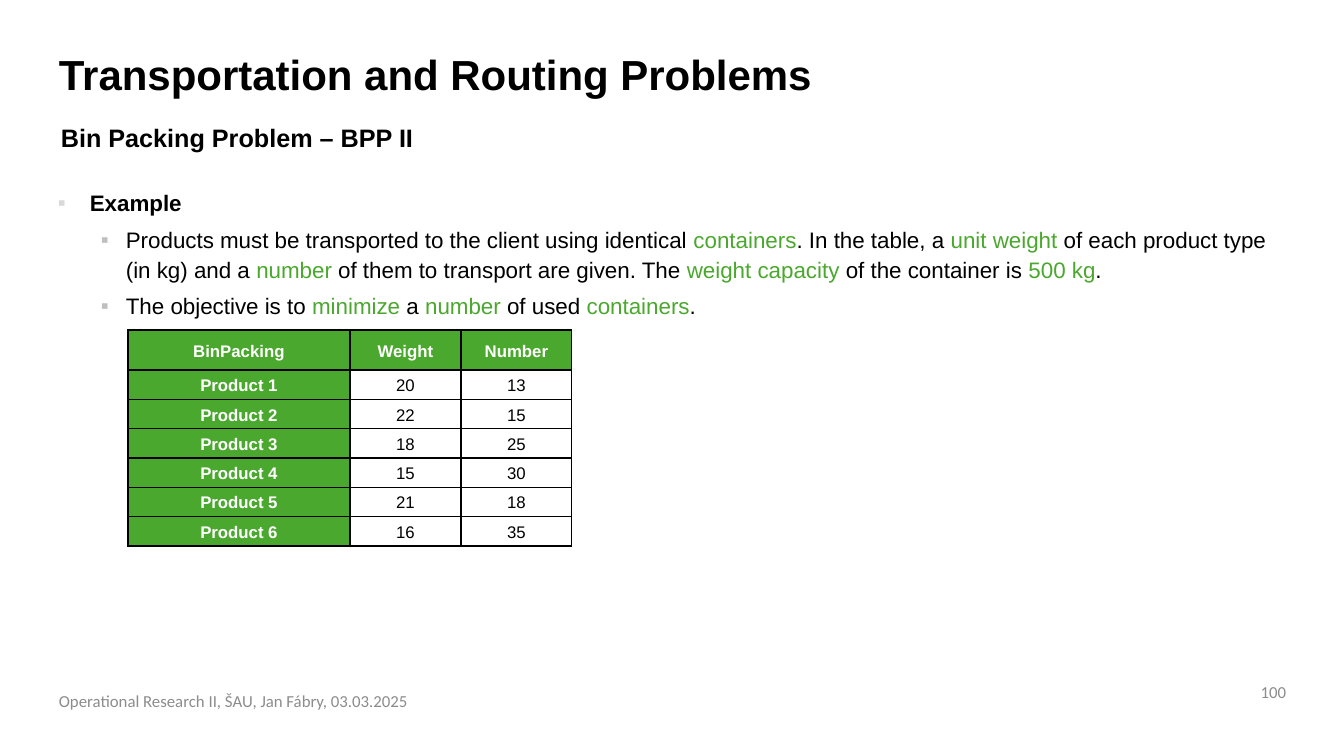
from pptx import Presentation
from pptx.dml.color import RGBColor
from pptx.enum.text import MSO_ANCHOR as Anchor, PP_ALIGN as Align
from pptx.oxml import parse_xml
from pptx.oxml.ns import nsdecls
from pptx.util import Pt

PX = 9071
GREEN, BLACK, WHITE, GREY = "4BA82E", "000000", "FFFFFF", "8C8C8C"


def colour(value):
    return RGBColor.from_string(value)


def write(para, text, size=16, font="Arial", color=BLACK, bold=False,
          align=Align.LEFT, spacing=None):
    para.alignment = align
    if spacing:
        para.line_spacing = spacing
    for index, part in enumerate(text.split("*")):
        span = para.add_run()
        span.text = part
        span.font.size = Pt(size)
        span.font.name = font
        span.font.bold = bold
        span.font.color.rgb = colour(GREEN if index % 2 else color)


deck = Presentation()
deck.slide_width, deck.slide_height = 1344 * PX, 756 * PX
page = deck.slides.add_slide(deck.slide_layouts[6])

footer_style = dict(size=12, font="Calibri", color=GREY)
labels = [
    ("100", (1246, 675, 50, 33), Anchor.MIDDLE,
     dict(footer_style, align=Align.RIGHT)),
    ("Transportation and Routing Problems", (49, 49, 1021, 57), Anchor.TOP,
     dict(size=30, bold=True, spacing=0.9)),
    ("Operational Research II, ŠAU, Jan Fábry, 03.03.2025", (49, 681, 723, 40),
     Anchor.MIDDLE, footer_style),
    ("Bin Packing Problem – BPP II", (51, 117, 1019, 40), Anchor.TOP,
     dict(size=18, bold=True)),
]
for text, place, anchor, style in labels:
    box = page.shapes.add_textbox(*[length * PX for length in place])
    box.text_frame.word_wrap = True
    box.text_frame.vertical_anchor = anchor
    write(box.text_frame.paragraphs[0], text, **style)

points = [
    (0, "Example"),
    (1, "Products must be transported to the client using identical *containers*. "
        "In the table, a *unit weight *of each product type (in kg) and a *number* "
        "of them to transport are given. The *weight capacity *of the container is "
        "*500 kg*."),
    (1, "The objective is to *minimize* a *number* of used *containers*."),
]
levels = [(32, 32, "D9D9D9"), (68, 25, "BFBFBF")]
box = page.shapes.add_textbox(48 * PX, 182 * PX, 1248 * PX, 416 * PX)
frame = box.text_frame
frame.word_wrap = True
for index, (level, text) in enumerate(points):
    para = frame.add_paragraph() if index else frame.paragraphs[0]
    para.level = level
    margin, hanging, bullet_color = levels[level]
    props = para._p.get_or_add_pPr()
    props.set("marL", str(margin * PX))
    props.set("indent", str(-hanging * PX))
    props.append(parse_xml(
        f'<a:buClr {nsdecls("a")}><a:srgbClr val="{bullet_color}"/></a:buClr>'))
    props.append(parse_xml(f'<a:buFont {nsdecls("a")} typeface="Arial"/>'))
    props.append(parse_xml(f'<a:buChar {nsdecls("a")} char="▪"/>'))
    if index:
        para.space_before = Pt(5)
    write(para, text, bold=level == 0, spacing=1.1)

rows = [
    ("BinPacking", "Weight", "Number"),
    ("Product 1", "20", "13"),
    ("Product 2", "22", "15"),
    ("Product 3", "18", "25"),
    ("Product 4", "15", "30"),
    ("Product 5", "21", "18"),
    ("Product 6", "16", "35"),
]
table = page.shapes.add_table(len(rows), 3, 128 * PX, 330 * PX,
                              444 * PX, 216 * PX).table
table.first_row = table.horz_banding = False
for column, width in zip(table.columns, (222, 111, 111)):
    column.width = width * PX
for r, values in enumerate(rows):
    table.rows[r].height = 176 * PX // 6 if r else 40 * PX
    for c, value in enumerate(values):
        heading = r == 0 or c == 0
        cell = table.cell(r, c)
        cell.margin_left = cell.margin_top = cell.margin_right = PX
        cell.margin_bottom = 0
        cell.vertical_anchor = Anchor.MIDDLE
        for side in ("lnL", "lnR", "lnT", "lnB"):
            cell._tc.get_or_add_tcPr().append(parse_xml(
                f'<a:{side} {nsdecls("a")} w="{Pt(1)}"><a:solidFill>'
                f'<a:srgbClr val="{BLACK}"/></a:solidFill></a:{side}>'))
        cell.fill.solid()
        cell.fill.fore_color.rgb = colour(GREEN if heading else WHITE)
        para = cell.text_frame.paragraphs[0]
        para.space_after = Pt(8)
        write(para, value, size=12, color=WHITE if heading else BLACK,
              bold=heading, align=Align.CENTER, spacing=1.07)

deck.save("out.pptx")
